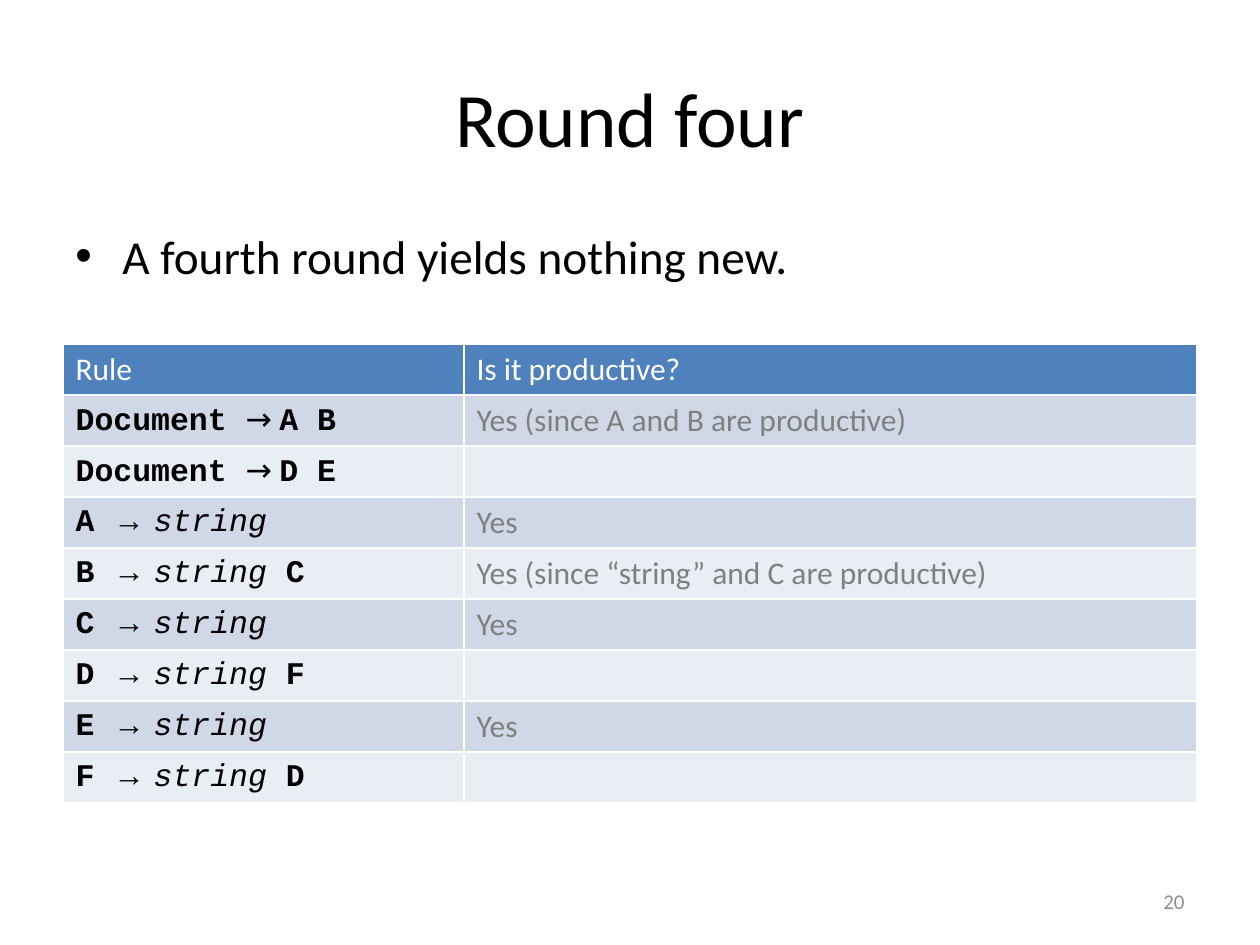
"""Build the "Round four" slide: a table of grammar rules and whether each is productive."""
from lxml.etree import SubElement
from pptx import Presentation
from pptx.dml.color import RGBColor
from pptx.enum.text import MSO_ANCHOR as Anchor, PP_ALIGN as Align
from pptx.oxml.ns import qn
from pptx.util import Emu, Pt


def px(length):
    return Emu(round(length * 914400 / 126))


def write(paragraph, text, color, **font_values):
    run = paragraph.add_run()
    run.text = text
    run.font.color.rgb = RGBColor.from_string(color)
    for name, value in font_values.items():
        setattr(run.font, name, value)


deck = Presentation()
deck.slide_width, deck.slide_height = px(1260), px(945)
slide = deck.slides.add_slide(deck.slide_layouts[6])

lines = {}
for text, box, size, color, anchor, align in [
    ("Round four", (63, 38, 1134, 157), 44, "000000", Anchor.MIDDLE, Align.CENTER),
    ("20", (903, 876, 294, 50), 12, "8C8C8C", Anchor.MIDDLE, Align.RIGHT),
    ("A fourth round yields nothing new.", (63, 221, 1134, 84), 27, "000000", Anchor.TOP, Align.LEFT),
]:
    frame = slide.shapes.add_textbox(*map(px, box)).text_frame
    frame.word_wrap = True
    frame.vertical_anchor = anchor
    lines[text] = frame.paragraphs[0]
    lines[text].alignment = align
    write(lines[text], text, color, name="Calibri", size=Pt(size))

summary = lines["A fourth round yields nothing new."]
summary.space_before = Pt(5.4)
indents = summary._p.get_or_add_pPr()
indents.set("marL", str(px(47)))
indents.set("indent", str(-px(47)))
SubElement(indents, qn("a:buFont")).set("typeface", "Arial")
SubElement(indents, qn("a:buChar")).set("char", "•")

styles = {
    "symbol": {"name": "Courier New", "bold": True},
    "terminal": {"name": "Courier New", "italic": True},
    "wide arrow": {"name": "Roboto Condensed", "bold": False},
    "arrow": {"name": "Arial", "bold": False},
}
rules = [
    ("Document ", "wide arrow", "", "A B", "Yes (since A and B are productive)"),
    ("Document ", "wide arrow", "", "D E", ""),
    ("A ", "arrow", "string", "", "Yes"),
    ("B ", "arrow", "string ", "C", "Yes (since “string” and C are productive)"),
    ("C ", "arrow", "string", "", "Yes"),
    ("D ", "arrow", "string", " F", ""),
    ("E ", "arrow", "string", "", "Yes"),
    ("F ", "arrow", "string", " D", ""),
]

row_count = len(rules) + 1
grid = slide.shapes.add_table(row_count, 2, px(63), px(344), px(1134), px(51 * row_count)).table
for column, width in zip(grid.columns, (401, 733)):
    column.width = px(width)

for cell, heading in zip(grid.rows[0].cells, ("Rule", "Is it productive?")):
    cell.fill.solid()
    cell.fill.fore_color.rgb = RGBColor.from_string("4F81BD")
    write(cell.text_frame.paragraphs[0], heading, "FFFFFF", name="Calibri", size=Pt(18), bold=False)

for index, (left, arrow, terminal, symbols, verdict) in enumerate(rules):
    rule_cell, verdict_cell = grid.rows[index + 1].cells
    for cell in (rule_cell, verdict_cell):
        cell.fill.solid()
        cell.fill.fore_color.rgb = RGBColor.from_string(("D0D8E8", "E9EDF4")[index % 2])
    for text, style in [(left, "symbol"), ("→ ", arrow), (terminal, "terminal"), (symbols, "symbol")]:
        if text:
            write(rule_cell.text_frame.paragraphs[0], text, "000000", size=Pt(18), **styles[style])
    if verdict:
        write(verdict_cell.text_frame.paragraphs[0], verdict, "808080", name="Calibri", size=Pt(18))

deck.save("out.pptx")
